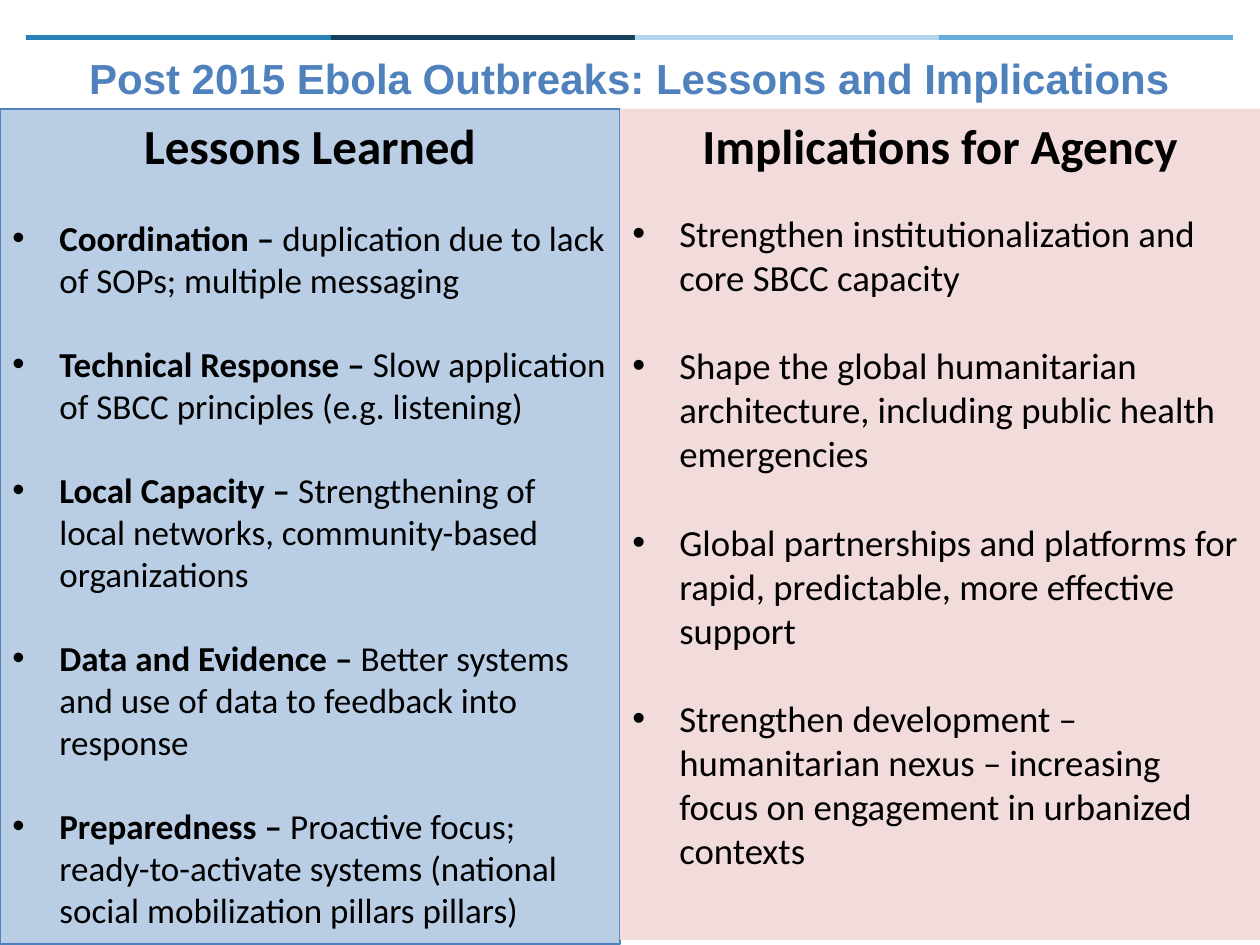
"""Build a slide on Ebola outbreak lessons and their implications."""
from lxml import etree
from pptx import Presentation
from pptx import util as u
from pptx.dml.color import RGBColor
from pptx.enum import shapes, text
from pptx.oxml import ns


def px(n):
    return u.Emu(round(n * 914400 / 126))


def paint(fmt, color):
    fmt.solid()
    fmt.fore_color.rgb = RGBColor.from_string(color)


deck = Presentation()
deck.slide_width, deck.slide_height = px(1260), px(945)
slide = deck.slides.add_slide(deck.slide_layouts[6])

bars = [(26, 305, "2A80B9"), (331, 304, "153F5B"),
        (635, 304, "B2D5EE"), (939, 294, "66ACDC")]
panels = [
    (0, 620, 835, "B9CDE5", "4F81BD", "Lessons Learned", 20, 24, 24, [
        ("Coordination – ", "duplication due to lack of SOPs; multiple messaging"),
        ("Technical Response – ", "Slow application of SBCC principles (e.g. listening)"),
        ("Local Capacity – ", "Strengthening of local networks, community-based organizations"),
        ("Data and Evidence – ", "Better systems and use of data to feedback into response"),
        ("Preparedness – ", "Proactive focus; ready-to-activate systems "
                            "(national social mobilization pillars pillars)")]),
    (620, 640, 831, "F2DCDB", None, "Implications for Agency", 21, 21, 25.2, [
        ("", "Strengthen institutionalization and core SBCC capacity"),
        ("", "Shape the global humanitarian architecture, including public health emergencies"),
        ("", "Global partnerships and platforms for rapid, predictable, more effective support"),
        ("", "Strengthen development – humanitarian nexus – increasing focus on "
             "engagement in urbanized contexts")]),
]

for left, wide, color in bars:
    bar = slide.shapes.add_shape(
        shapes.MSO_SHAPE.RECTANGLE, px(left), px(35), px(wide), px(5))
    bar.shadow.inherit = False
    paint(bar.fill, color)
    bar.line.fill.background()

title = slide.shapes.add_textbox(px(26), px(46), px(1207), px(63))
title.text_frame.word_wrap = True
head = title.text_frame.paragraphs[0]
head.text = "Post 2015 Ebola Outbreaks: Lessons and Implications"
head.alignment = text.PP_ALIGN.CENTER
head.font.name, head.font.size, head.font.bold = "Arial", u.Pt(24), True
paint(head.font.fill, "4F81BD")

for left, wide, high, color, edge, label, size, first, gap, items in panels:
    panel = slide.shapes.add_shape(
        shapes.MSO_SHAPE.RECTANGLE, px(left), px(109), px(wide), px(high))
    panel.shadow.inherit = False
    paint(panel.fill, color)
    if edge:
        paint(panel.line.fill, edge)
        panel.line.width = u.Pt(0.75)
    else:
        panel.line.fill.background()
    frame = panel.text_frame
    frame.word_wrap = True
    frame.vertical_anchor = text.MSO_ANCHOR.TOP
    head = frame.paragraphs[0]
    head.text = label
    head.alignment = text.PP_ALIGN.CENTER
    head.font.name, head.font.size, head.font.bold = "Calibri", u.Pt(28), True
    paint(head.font.fill, "000000")
    for rank, (lead, body) in enumerate(items):
        para = frame.add_paragraph()
        para.alignment = text.PP_ALIGN.LEFT
        para.space_before = u.Pt(gap if rank else first)
        para.font.name, para.font.size = "Calibri", u.Pt(size)
        paint(para.font.fill, "000000")
        if lead:
            run = para.add_run()
            run.text = lead
            run.font.bold = True
        para.add_run().text = body
        props = para._p.get_or_add_pPr()
        props.set("marL", str(px(47)))
        props.set("indent", str(-px(47)))
        mark = etree.Element(ns.qn("a:buChar"), char="•")
        props.find(ns.qn("a:defRPr")).addprevious(mark)
        face = etree.Element(ns.qn("a:buFont"), typeface="Arial")
        mark.addprevious(face)

deck.save("out.pptx")
